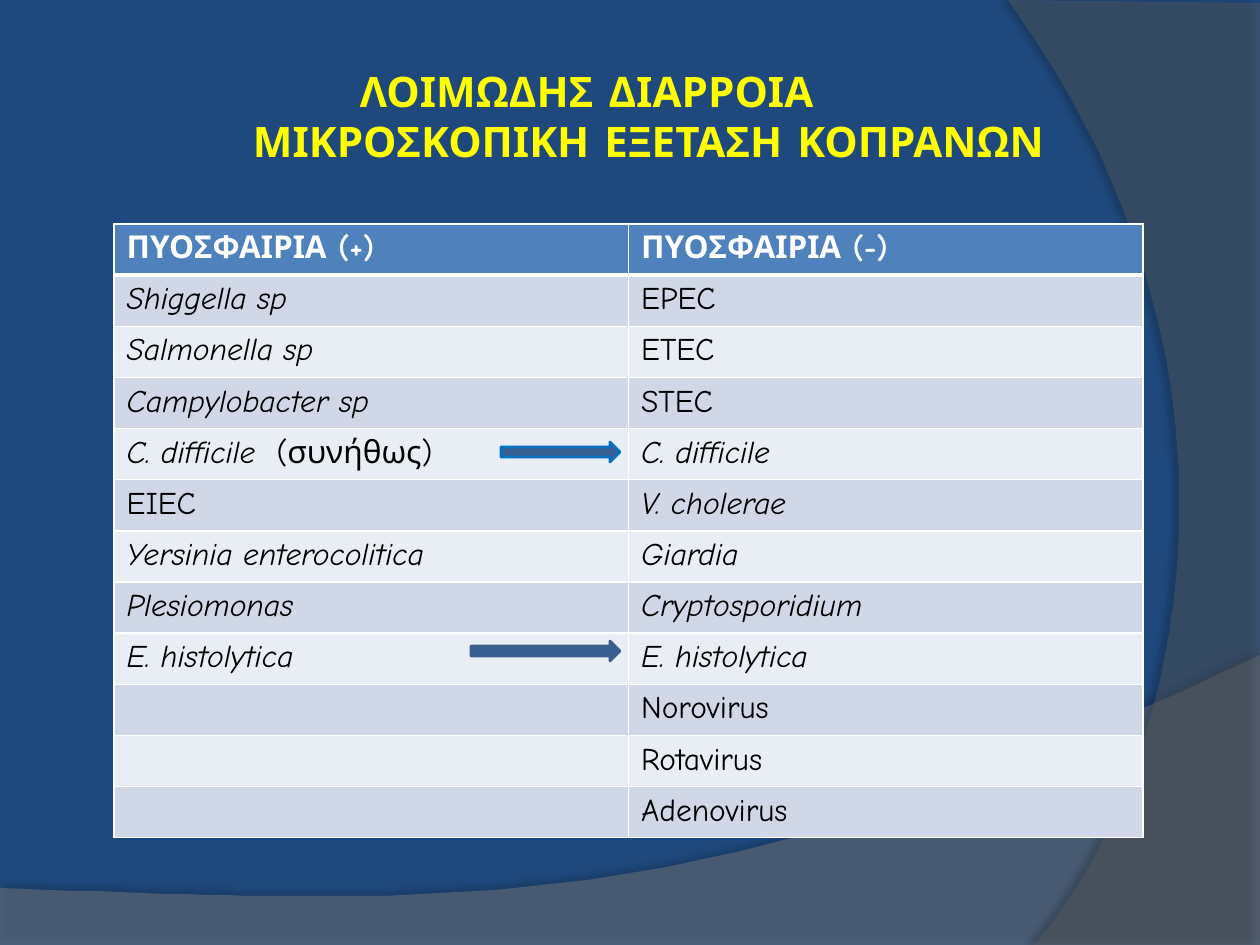
from lxml import etree
from pptx import Presentation
from pptx.dml.color import RGBColor
from pptx.enum.shapes import MSO_SHAPE
from pptx.enum.text import MSO_ANCHOR, PP_ALIGN
from pptx.oxml.ns import qn
from pptx.util import Emu, Pt

ARROW = MSO_SHAPE.RIGHT_ARROW
MIDDLE = MSO_ANCHOR.MIDDLE
LEFT, CENTER = PP_ALIGN.LEFT, PP_ALIGN.CENTER

NAVY = RGBColor(0x1F, 0x49, 0x7D)
GREY = RGBColor(0x7F, 0x7F, 0x7F)
DARK_GREY = RGBColor(0x5E, 0x5E, 0x5E)
YELLOW = RGBColor(0xFF, 0xFF, 0x00)
WHITE = RGBColor(0xFF, 0xFF, 0xFF)
BLACK = RGBColor(0x00, 0x00, 0x00)
HEADER = RGBColor(0x4F, 0x81, 0xBD)
BANDS = (RGBColor(0xE9, 0xED, 0xF4), RGBColor(0xD0, 0xD8, 0xE8))
ARROW_FILL = RGBColor(0x37, 0x60, 0x92)
BRIGHT_BLUE = RGBColor(0x00, 0x70, 0xC0)
STEEL_BLUE = RGBColor(0x3A, 0x5F, 0x8C)

FONT = "Comic Neue"
SCALE = 914400 / 126
WIDTH, HEIGHT = 1260, 945

# Title lines: text, alignment, left indent in px
TITLE = [
    ("ΛΟΙΜΩΔΗΣ ΔΙΑΡΡΟΙΑ", LEFT, 220),
    ("ΜΙΚΡΟΣΚΟΠΙΚΗ ΕΞΕΤΑΣΗ ΚΟΠΡΑΝΩΝ", CENTER, 0),
]
TITLE_BOX = (134, 37, 1029, 157)

HEADINGS = ("ΠΥΟΣΦΑΙΡΙΑ (+)", "ΠΥΟΣΦΑΙΡΙΑ (-)")
ROWS = [
    ("Shiggella sp", "EPEC"),
    ("Salmonella sp", "ETEC"),
    ("Campylobacter sp", "STEC"),
    ("C. difficile ", "C. difficile"),
    ("EIEC", "V. cholerae"),
    ("Yersinia enterocolitica", "Giardia"),
    ("Plesiomonas", "Cryptosporidium"),
    ("E. histolytica", "E. histolytica"),
    ("", "Norovirus"),
    ("", "Rotavirus"),
    ("", "Adenovirus"),
]
UPRIGHT = {"EPEC", "ETEC", "STEC", "EIEC", "Norovirus", "Rotavirus", "Adenovirus"}
REMARKS = {(4, 0): " (συνήθως)"}
TABLE_BOX = (114, 224, 1029, 614)

# Arrows: box, line colour
ARROWS = [
    ((501, 442, 119, 20), BRIGHT_BLUE),
    ((471, 641, 149, 20), STEEL_BLUE),
]

# Swooshes: straight corners, curve controls and end, fill, opacity, shadow
SWOOSHES = [
    ([(0, 888), (0, 945), (1260, 945), (1260, 655)],
     [(704, 919), (493, 906), (0, 888)], GREY, 45, (35, 4, 3.5, 270)),
    ([(1260, 3), (1260, 945), (1034, 945)],
     [(1178, 780), (1283, 378), (1008, 0)], DARK_GREY, 40, (45, 4, 4, 180)),
]


def px(n):
    return Emu(round(n * SCALE))


def box(values):
    return [px(v) for v in values]


def add_run(p, text, size=18, color=BLACK, bold=False, italic=False):
    r = p.add_run()
    r.text = text
    r.font.name = FONT
    r.font.size = Pt(size)
    r.font.color.rgb = color
    r.font.bold = bold
    r.font.italic = italic


def bezier(points, steps=60):
    """Points along a cubic curve, without its start."""
    for i in range(1, steps + 1):
        t = i / steps
        weights = ((1 - t) ** 3, 3 * t * (1 - t) ** 2, 3 * t * t * (1 - t), t ** 3)
        yield tuple(sum(w * pt[axis] for w, pt in zip(weights, points)) for axis in (0, 1))


def add_swoosh(slide, corners, curve, color, opacity, shadow):
    outline = corners + list(bezier([corners[-1]] + curve))
    builder = slide.shapes.build_freeform(*outline[0], scale=SCALE)
    builder.add_line_segments(outline[1:], close=True)
    s = builder.convert_to_shape()
    s.fill.solid()
    s.fill.fore_color.rgb = color
    s.line.fill.background()
    s.shadow.inherit = False
    sp_pr = s._element.spPr
    set_opacity(sp_pr.find(qn("a:solidFill"))[0], opacity)
    shadow_opacity, blur, dist, angle = shadow
    outer = etree.SubElement(
        sp_pr.find(qn("a:effectLst")), qn("a:outerShdw"), blurRad=str(Pt(blur)),
        dist=str(Pt(dist)), dir=str(angle * 60000), rotWithShape="0")
    set_opacity(etree.SubElement(outer, qn("a:srgbClr"), val=str(BLACK)), shadow_opacity)


def set_opacity(color_element, percent):
    etree.SubElement(color_element, qn("a:alpha"), val=str(percent * 1000))


def style_cell(cell, fill, bottom=1):
    """Set white borders, then the fill, in the order the schema asks for."""
    tc_pr = cell._tc.get_or_add_tcPr()
    for side, width in (("L", 1), ("R", 1), ("T", 1), ("B", bottom)):
        ln = etree.SubElement(tc_pr, qn(f"a:ln{side}"), w=str(Pt(width)))
        solid = etree.SubElement(ln, qn("a:solidFill"))
        etree.SubElement(solid, qn("a:srgbClr"), val=str(WHITE))
    cell.fill.solid()
    cell.fill.fore_color.rgb = fill


def add_title(slide):
    tf = slide.shapes.add_textbox(*box(TITLE_BOX)).text_frame
    tf.word_wrap = True
    tf.vertical_anchor = MIDDLE
    tf.margin_left = tf.margin_right = tf.margin_top = tf.margin_bottom = px(6)
    for i, (text, align, indent) in enumerate(TITLE):
        p = tf.add_paragraph() if i else tf.paragraphs[0]
        p.alignment = align
        p._p.get_or_add_pPr().set("marL", str(px(indent)))
        add_run(p, text, size=24, color=YELLOW, bold=True)


def add_findings_table(slide):
    rows = [HEADINGS] + ROWS
    table = slide.shapes.add_table(len(rows), len(HEADINGS), *box(TABLE_BOX)).table
    for row in table.rows:
        row.height = px(TABLE_BOX[3] / len(rows))
    for i, texts in enumerate(rows):
        for j, text in enumerate(texts):
            cell = table.cell(i, j)
            p = cell.text_frame.paragraphs[0]
            if i == 0:
                style_cell(cell, HEADER, bottom=3)
                add_run(p, text, color=WHITE, bold=True)
                continue
            style_cell(cell, BANDS[i % 2], bottom=1)
            if text:
                add_run(p, text, italic=text not in UPRIGHT)
            else:
                p.font.size = Pt(18)
            if (i, j) in REMARKS:
                add_run(p, REMARKS[i, j])


def add_arrow(slide, place, line_color):
    s = slide.shapes.add_shape(ARROW, *box(place))
    s.shadow.inherit = False
    s.fill.solid()
    s.fill.fore_color.rgb = ARROW_FILL
    s.line.color.rgb = line_color
    s.line.width = Pt(1.5)


def main():
    prs = Presentation()
    prs.slide_width, prs.slide_height = px(WIDTH), px(HEIGHT)
    slide = prs.slides.add_slide(prs.slide_layouts[6])
    slide.background.fill.solid()
    slide.background.fill.fore_color.rgb = NAVY
    for swoosh in SWOOSHES:
        add_swoosh(slide, *swoosh)
    add_title(slide)
    add_findings_table(slide)
    for place, line_color in ARROWS:
        add_arrow(slide, place, line_color)
    prs.save("out.pptx")


if __name__ == "__main__":
    main()
